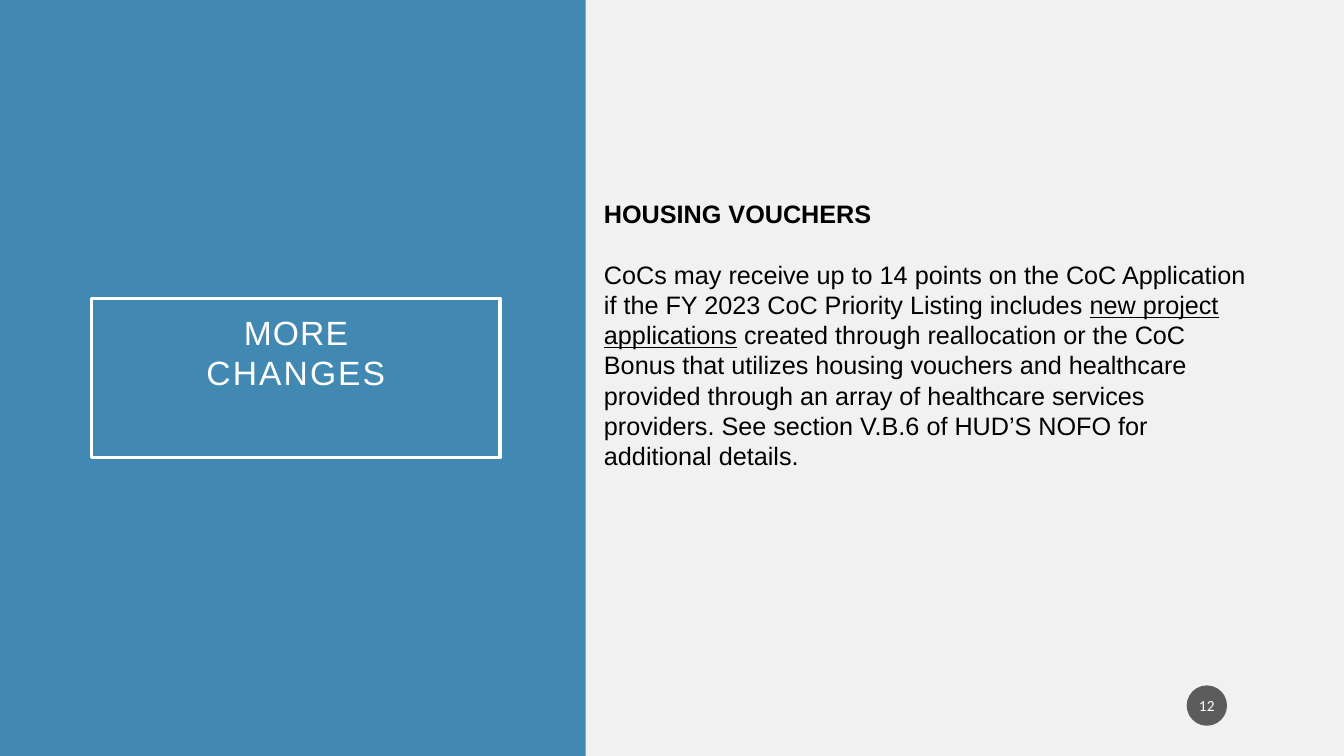
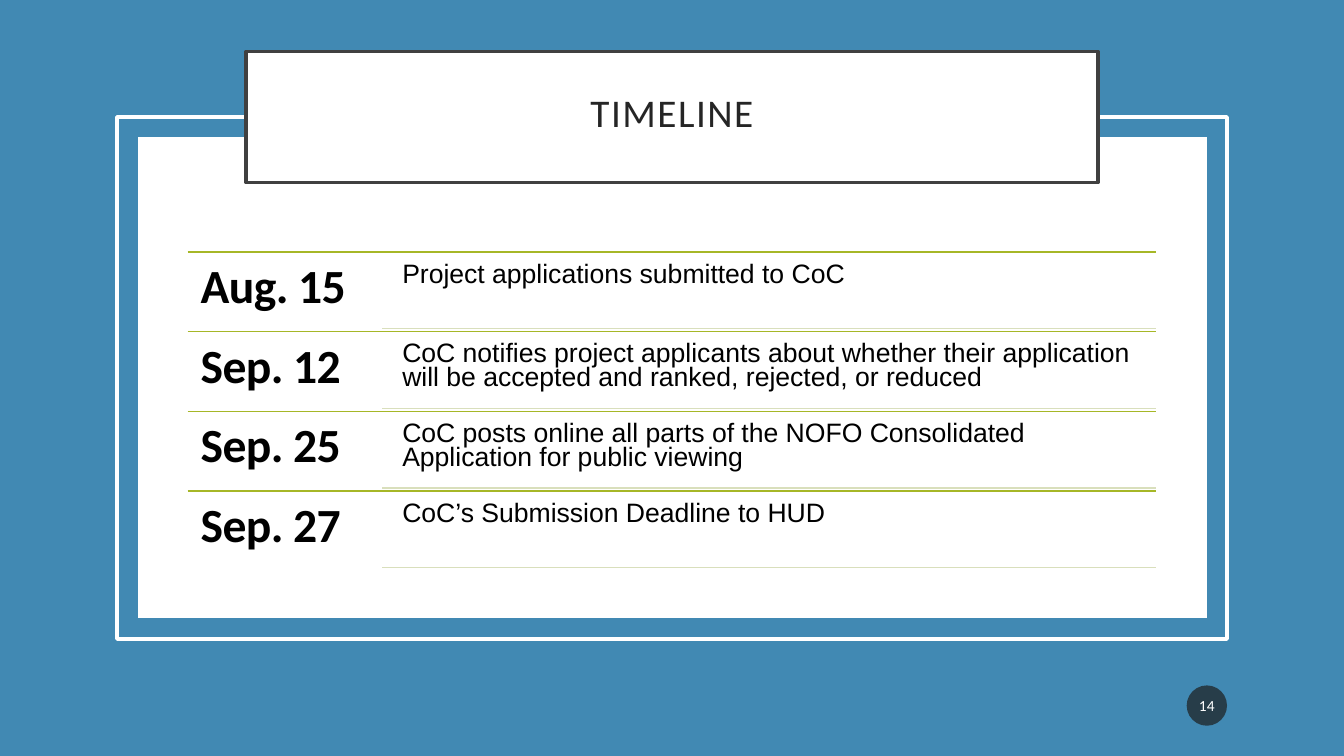
from dataclasses import dataclass

from lxml import etree
from pptx import Presentation
from pptx.dml.color import RGBColor
from pptx.enum import shapes, text
from pptx.oxml import ns
from pptx.util import Inches, Pt


@dataclass(frozen=True)
class Theme:
    blue: str = "4189B3"
    pale: str = "F1F1F1"
    white: str = "FFFFFF"
    black: str = "000000"
    heading: str = "252525"
    frame: str = "404040"
    badge: str = "1D1D1D"
    rule: str = "A6B727"
    soft_rule: str = "D9DFBC"
    sans: str = "Arial"
    display: str = "Calibri"
    panel_size: float = 24
    body_size: float = 18
    title_size: float = 28
    date_size: float = 34
    event_size: float = 19
    badge_size: float = 11
    outline: float = 2.5
    hairline: float = 1


theme = Theme()


def add_panel(page, place, fill=None, outline=None, kind=shapes.MSO_SHAPE.RECTANGLE):
    panel = page.shapes.add_shape(kind, *map(Inches, place))
    panel.shadow.inherit = False
    if fill:
        panel.fill.solid()
        panel.fill.fore_color.rgb = RGBColor.from_string(fill)
    else:
        panel.fill.background()
    if outline:
        panel.line.color.rgb = RGBColor.from_string(outline)
        panel.line.width = Pt(theme.outline)
    else:
        panel.line.fill.background()
    return panel


def write(box, paragraphs, font, size, color, align=text.PP_ALIGN.LEFT, bold=False,
          top=0.01, spacing=None, anchor=text.MSO_ANCHOR.TOP):
    frame = box.text_frame
    frame.word_wrap = True
    frame.auto_size = text.MSO_AUTO_SIZE.NONE
    frame.vertical_anchor = anchor
    frame.margin_left = frame.margin_right = frame.margin_bottom = 0
    frame.margin_top = Inches(top)
    for index, spans in enumerate(paragraphs):
        para = frame.add_paragraph() if index else frame.paragraphs[0]
        para.alignment = align
        para.line_spacing = spacing
        for words, tracking, underline in spans:
            span = para.add_run()
            span.text = words
            span.font.name = font
            span.font.size = Pt(size)
            span.font.bold = bold
            span.font.underline = underline
            span.font.color.rgb = RGBColor.from_string(color)
            span.font._element.set("spc", str(tracking))


deck = Presentation()
deck.slide_width = Inches(13.33)
deck.slide_height = Inches(7.5)

pages = []
for background, title_place in (
    (theme.pale, (5.99, 1.96, 4, 0.33)),
    (theme.blue, (2.44, 0.51, 8.45, 1.3)),
):
    page = deck.slides.add_slide(deck.slide_layouts[5])
    page.background.fill.solid()
    page.background.fill.fore_color.rgb = RGBColor.from_string(background)
    title = page.shapes.title
    title.left, title.top, title.width, title.height = map(Inches, title_place)
    pages.append(page)
vouchers, timeline = pages

add_panel(vouchers, (0, 0, 5.81, 7.5), theme.blue)
label = add_panel(vouchers, (0.91, 2.96, 4.05, 1.58), outline=theme.white)
write(label, [[("MORE", 80, False)], [("CHANGES", 150, False)]],
      theme.sans, theme.panel_size, theme.white,
      align=text.PP_ALIGN.CENTER, top=0.14, spacing=Pt(28.4))
write(vouchers.shapes.title, [[("HOUSING VOUCHERS", 0, False)]],
      theme.sans, theme.body_size, theme.black, bold=True)
body = vouchers.shapes.add_textbox(*map(Inches, (5.99, 2.56, 6.45, 2.13)))
write(body, [[
    ("CoCs may receive up to 14 points on the CoC Application if the FY 2023 CoC "
     "Priority Listing includes ", 0, False),
    ("new project applications", 0, True),
    (" created through reallocation or the CoC Bonus that utilizes housing vouchers "
     "and healthcare provided through an array of healthcare services providers. "
     "See section V.B.6 of HUD’S NOFO for additional details.", 0, False),
]], theme.sans, theme.body_size, theme.black)

add_panel(timeline, (1.37, 1.36, 10.6, 4.77), theme.white)
add_panel(timeline, (1.16, 1.16, 11.01, 5.18), outline=theme.white)
title = timeline.shapes.title
title.element.getparent().append(title.element)
title.fill.solid()
title.fill.fore_color.rgb = RGBColor.from_string(theme.white)
title.line.color.rgb = RGBColor.from_string(theme.frame)
title.line.width = Pt(theme.outline)
write(title, [[("TIMELINE", 110, False)]], theme.display, theme.title_size,
      theme.heading, align=text.PP_ALIGN.CENTER, top=0.37)

events = (
    ("Aug. 15", "Project applications submitted to CoC"),
    ("Sep. 12", "CoC notifies project applicants about whether their application "
                "will be accepted and ranked, rejected, or reduced"),
    ("Sep. 25", "CoC posts online all parts of the NOFO Consolidated "
                "Application for public viewing"),
    ("Sep. 27", "CoC’s Submission Deadline to HUD"),
)
first_row, row_pitch, right_edge = 2.5, 0.79, 11.47
for row, (date, event) in enumerate(events):
    top = first_row + row * row_pitch
    for left, y, color in (
        (1.86, top, theme.rule),
        (3.79, top + 0.76, theme.soft_rule),
    ):
        rule = timeline.shapes.add_connector(
            shapes.MSO_CONNECTOR.STRAIGHT, *map(Inches, (left, y, right_edge, y)))
        rule.line.color.rgb = RGBColor.from_string(color)
        rule.line.width = Pt(theme.hairline)
        etree.SubElement(rule.element.spPr, ns.qn("a:effectLst"))
    date_box = timeline.shapes.add_textbox(*map(Inches, (1.99, top + 0.03, 1.7, 0.59)))
    write(date_box, [[(date, -40, False)]], theme.display, theme.date_size,
          theme.black, bold=True)
    event_box = timeline.shapes.add_textbox(*map(Inches, (3.99, top + 0.02, 7.4, 0.58)))
    write(event_box, [[(event, 0, False)]], theme.sans, theme.event_size,
          theme.black, top=0.1, spacing=0.75)

for page, number in ((vouchers, "12"), (timeline, "14")):
    badge = add_panel(page, (11.77, 6.8, 0.4, 0.4), theme.badge,
                      kind=shapes.MSO_SHAPE.OVAL)
    color = badge.element.spPr.find(ns.qn("a:solidFill"))[0]
    etree.SubElement(color, ns.qn("a:alpha"), val="70000")
    write(badge, [[(number, 0, False)]], theme.display, theme.badge_size, theme.white,
          align=text.PP_ALIGN.CENTER, top=0, anchor=text.MSO_ANCHOR.MIDDLE)

deck.save("out.pptx")
